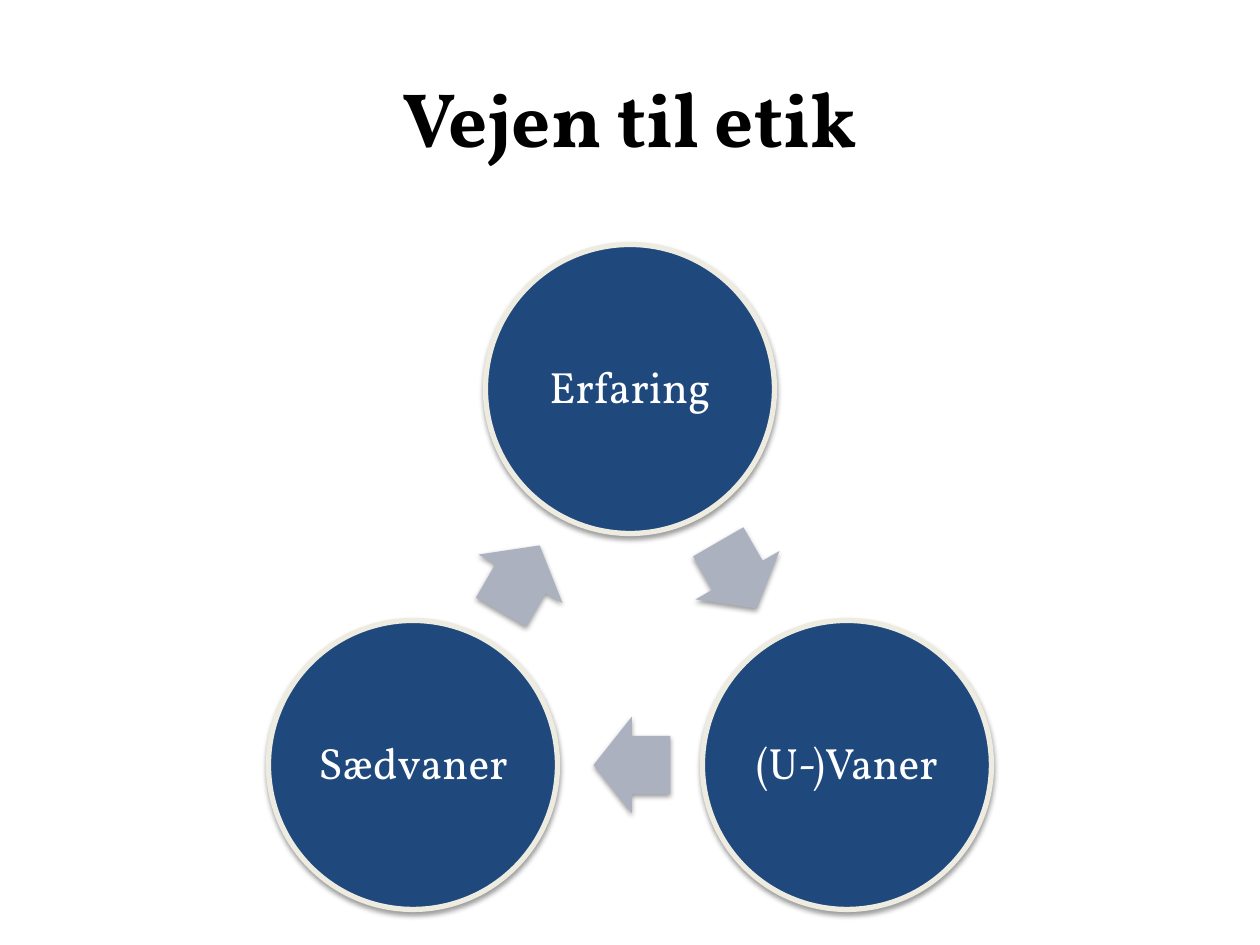
import math

import lxml.etree
import pptx
import pptx.dml.color
import pptx.enum.shapes
import pptx.enum.text
import pptx.oxml.ns
import pptx.util

TITLE = "Vejen til etik"
STEPS = [
    ("Erfaring", (630, 389)),
    ("(U-)Vaner", (847, 765)),
    ("Sædvaner", (413, 765)),
]
FONT = "Vollkorn"
PX = 914400 // 126
CIRCLE_SIZE = 289
ARROW_LENGTH, ARROW_HEIGHT = 77, 97
ARROW_SETBACK = 2


def color(value):
    return pptx.dml.color.RGBColor.from_string(value)


def place(center, width, height):
    x, y = center
    return [round(length * PX) for length in (x - width / 2, y - height / 2, width, height)]


def format_text(text_frame, size, text_color, bold=False):
    text_frame.vertical_anchor = pptx.enum.text.MSO_ANCHOR.MIDDLE
    paragraph = text_frame.paragraphs[0]
    paragraph.alignment = pptx.enum.text.PP_ALIGN.CENTER
    font = paragraph.runs[0].font
    font.name = FONT
    font.size = pptx.util.Pt(size)
    font.bold = bold
    font.color.rgb = color(text_color)


def add_shadow(shape):
    shape.shadow.inherit = False
    effects = shape._element.spPr.find(pptx.oxml.ns.qn("a:effectLst"))
    shadow = lxml.etree.SubElement(
        effects, pptx.oxml.ns.qn("a:outerShdw"),
        blurRad=str(pptx.util.Pt(3.1)), dist=str(pptx.util.Pt(1.6)),
        dir="5400000", rotWithShape="0")
    shade = lxml.etree.SubElement(shadow, pptx.oxml.ns.qn("a:srgbClr"), val="000000")
    lxml.etree.SubElement(shade, pptx.oxml.ns.qn("a:alpha"), val="38000")


def add_circle(slide, label, center):
    circle = slide.shapes.add_shape(
        pptx.enum.shapes.MSO_SHAPE.OVAL, *place(center, CIRCLE_SIZE, CIRCLE_SIZE))
    circle.fill.solid()
    circle.fill.fore_color.rgb = color("1F497D")
    circle.line.color.rgb = color("EEECE1")
    circle.line.width = pptx.util.Pt(3)
    add_shadow(circle)
    text_frame = circle.text_frame
    text_frame.text = label
    text_frame.word_wrap = True
    text_frame.margin_left = text_frame.margin_right = 4 * PX
    text_frame.margin_top = text_frame.margin_bottom = 4 * PX
    text_frame.paragraphs[0].line_spacing = 0.9
    format_text(text_frame, 25, "FFFFFF")


def add_arrow(slide, start, end):
    angle = math.atan2(end[1] - start[1], end[0] - start[0])
    center = (
        (start[0] + end[0]) / 2 - ARROW_SETBACK * math.cos(angle),
        (start[1] + end[1]) / 2 - ARROW_SETBACK * math.sin(angle),
    )
    arrow = slide.shapes.add_shape(
        pptx.enum.shapes.MSO_SHAPE.RIGHT_ARROW, *place(center, ARROW_LENGTH, ARROW_HEIGHT))
    arrow.adjustments[0] = 0.6
    arrow.adjustments[1] = 0.5
    arrow.rotation = round(math.degrees(angle)) % 360
    arrow.fill.solid()
    arrow.fill.fore_color.rgb = color("ACB1BF")
    arrow.line.fill.background()
    add_shadow(arrow)


def main():
    presentation = pptx.Presentation()
    presentation.slide_width = 1260 * PX
    presentation.slide_height = 945 * PX
    slide = presentation.slides.add_slide(presentation.slide_layouts[5])

    title = slide.shapes.title
    title.left, title.top, title.width, title.height = 0, 38 * PX, 1260 * PX, 157 * PX
    title.text_frame.text = TITLE
    format_text(title.text_frame, 44, "000000", bold=True)

    for index, (label, center) in enumerate(STEPS):
        add_circle(slide, label, center)
        add_arrow(slide, center, STEPS[(index + 1) % len(STEPS)][1])

    presentation.save("out.pptx")


if __name__ == "__main__":
    main()
